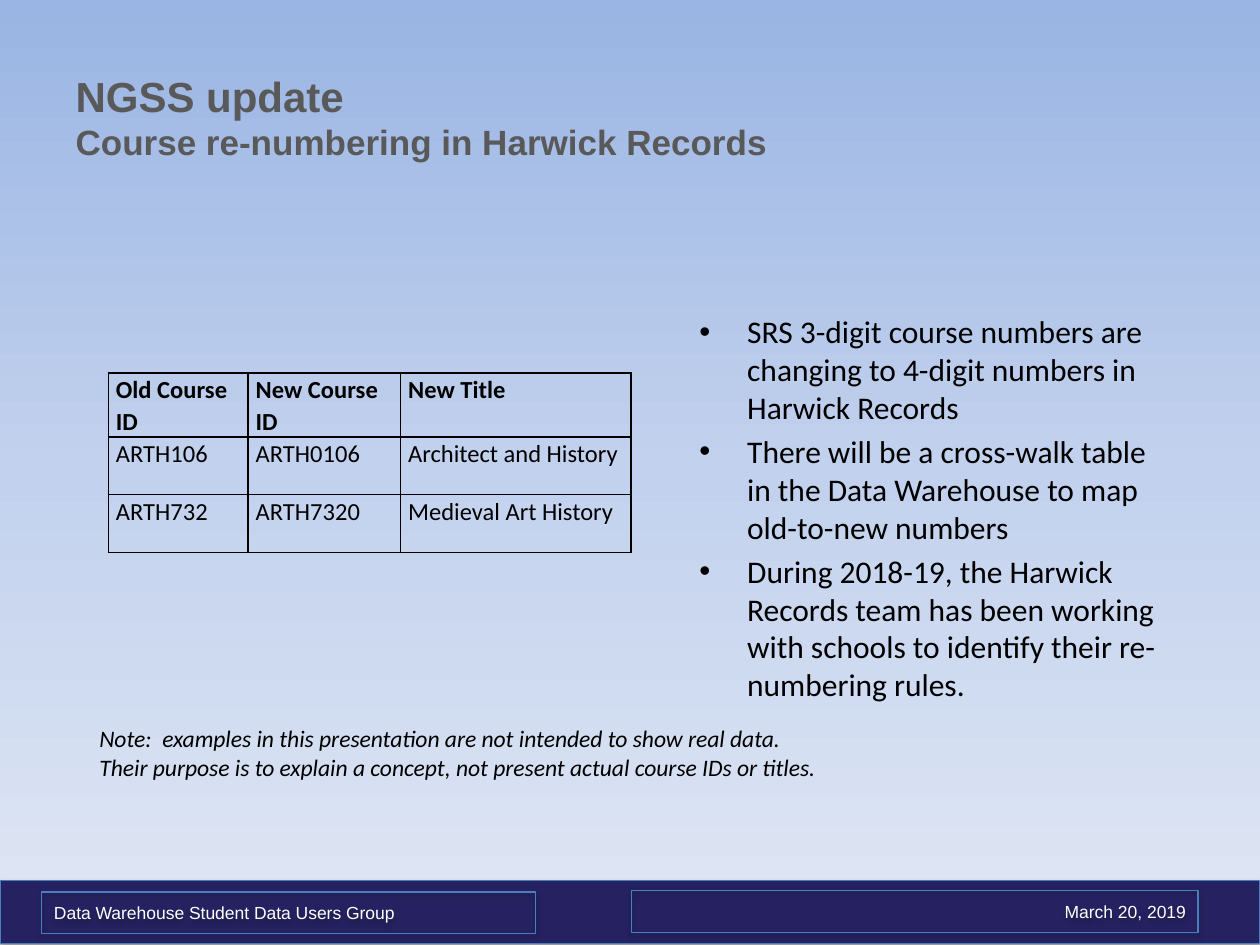
"""Build the course re-numbering update slide."""
from copy import deepcopy
from dataclasses import dataclass

from lxml import etree
from pptx import Presentation
from pptx.dml.color import RGBColor
from pptx.enum.shapes import MSO_SHAPE
from pptx.enum.text import MSO_ANCHOR, MSO_AUTO_SIZE, PP_ALIGN
from pptx.oxml.ns import qn
from pptx.util import Inches, Pt

RECTANGLE = MSO_SHAPE.RECTANGLE
MIDDLE, TOP = MSO_ANCHOR.MIDDLE, MSO_ANCHOR.TOP
LEFT, RIGHT = PP_ALIGN.LEFT, PP_ALIGN.RIGHT
NO_FIT = MSO_AUTO_SIZE.NONE

COLORS = {
    "sky_top": "9AB5E4",
    "sky_middle": "C2D1ED",
    "sky_bottom": "E1E8F5",
    "title": "595959",
    "text": "000000",
    "footer": "262262",
    "footer_line": "4B7EBC",
    "footer_text": "FFFFFF",
}
COLUMN_WIDTHS = (1.11, 1.21, 1.83)
ROW_HEIGHTS = (0.47, 0.46, 0.46)
COURSES = (
    ("Old Course ID", "New Course ID", "New Title"),
    ("ARTH106", "ARTH0106", "Architect and History"),
    ("ARTH732", "ARTH7320", "Medieval Art History"),
)
POINTS = (
    "SRS 3-digit course numbers are changing to 4-digit numbers in Harwick Records",
    "There will be a cross-walk table in the Data Warehouse to map old-to-new numbers",
    "During 2018-19, the Harwick Records team has been working with schools "
    "to identify their re-numbering rules.",
)
NOTE = (
    "Note:  examples in this presentation are not intended to show real data. "
    "Their purpose is to explain a concept, not present actual course IDs or titles."
)


@dataclass
class Area:
    left: float
    top: float
    width: float
    height: float

    def lengths(self) -> tuple:
        return tuple(Inches(n) for n in (self.left, self.top, self.width, self.height))


@dataclass
class TextStyle:
    size: float
    color: str = "text"
    font: str = "Calibri"
    bold: bool = False
    italic: bool = False


@dataclass
class FooterBox:
    area: Area
    text: str = ""
    align: PP_ALIGN = LEFT
    fill: str = ""


FOOTER_STYLE = TextStyle(10, "footer_text", "Arial")
FOOTER = (
    FooterBox(Area(0, 6.99, 10, 0.5), fill="footer"),
    FooterBox(Area(0.33, 7.08, 3.92, 0.33), "Data Warehouse Student Data Users Group"),
    FooterBox(Area(5.01, 7.07, 4.5, 0.33), "March 20, 2019", RIGHT),
)


def rgb(name: str) -> RGBColor:
    return RGBColor.from_string(COLORS[name])


def add_span(para, text: str, style: TextStyle) -> None:
    span = para.add_run()
    span.text = text
    font = span.font
    font.size, font.name = Pt(style.size), style.font
    font.bold, font.italic = style.bold, style.italic
    font.color.rgb = rgb(style.color)


def place(box, area: Area) -> None:
    box.left, box.top, box.width, box.height = area.lengths()


def paint_background(page) -> None:
    fill = page.background.fill
    fill.gradient()
    fill.gradient_angle = 270
    stop_list = page.element.find(".//" + qn("a:gsLst"))
    stop_list.insert(1, deepcopy(stop_list[0]))
    names = ("sky_top", "sky_middle", "sky_bottom")
    for index, (stop, name) in enumerate(zip(fill.gradient_stops, names)):
        stop.position = index / 2
        stop.color.rgb = rgb(name)


def fill_title(box) -> None:
    place(box, Area(0.5, 0.3, 9, 1.25))
    frame = box.text_frame
    frame.vertical_anchor = MIDDLE
    frame.auto_size = NO_FIT
    para = frame.paragraphs[0]
    para.alignment = LEFT
    add_span(para, "NGSS update", TextStyle(24, "title", "Arial", bold=True))
    para.add_line_break()
    add_span(para, "Course re-numbering in Harwick Records",
             TextStyle(20, "title", "Arial", bold=True))


def fill_body(box) -> None:
    place(box, Area(5.45, 2.43, 3.86, 3.57))
    frame = box.text_frame
    frame.vertical_anchor = TOP
    frame.auto_size = NO_FIT
    for index, point in enumerate(POINTS):
        para = frame.add_paragraph() if index else frame.paragraphs[0]
        add_span(para, point, TextStyle(18))
        properties = para._p.get_or_add_pPr()
        properties.set("marL", str(Inches(0.38)))
        properties.set("indent", str(-Inches(0.38)))
        etree.SubElement(properties, qn("a:buChar")).set("char", "•")


def add_borders(cell) -> None:
    properties = cell._tc.get_or_add_tcPr()
    for index, side in enumerate(("lnL", "lnR", "lnT", "lnB")):
        line = etree.Element(qn("a:" + side), w=str(Pt(1)))
        solid = etree.SubElement(line, qn("a:solidFill"))
        etree.SubElement(solid, qn("a:srgbClr")).set("val", COLORS["text"])
        properties.insert(index, line)


def add_course_table(page) -> None:
    area = Area(0.86, 2.96, sum(COLUMN_WIDTHS), sum(ROW_HEIGHTS))
    table = page.shapes.add_table(len(ROW_HEIGHTS), len(COLUMN_WIDTHS), *area.lengths()).table
    table.first_row = table.horz_banding = False
    for column, width in zip(table.columns, COLUMN_WIDTHS):
        column.width = Inches(width)
    for index, (row, height, values) in enumerate(zip(table.rows, ROW_HEIGHTS, COURSES)):
        row.height = Inches(height)
        for cell, value in zip(row.cells, values):
            cell.margin_left = cell.margin_right = Inches(0.06)
            cell.margin_top = cell.margin_bottom = 0
            cell.fill.background()
            add_borders(cell)
            para = cell.text_frame.paragraphs[0]
            para.line_spacing = 1.07
            add_span(para, value, TextStyle(14, bold=index == 0))


def add_note(page) -> None:
    box = page.shapes.add_textbox(*Area(0.69, 5.7, 5.99, 0.56).lengths())
    box.text_frame.word_wrap = True
    add_span(box.text_frame.paragraphs[0], NOTE, TextStyle(13.5, italic=True))


def add_shadow(box) -> None:
    box.shadow.inherit = False
    effects = box._element.spPr.find(qn("a:effectLst"))
    shadow = etree.SubElement(effects, qn("a:outerShdw"), blurRad=str(Pt(3.1)),
                              dist=str(Pt(1.8)), dir="5400000", rotWithShape="0")
    color = etree.SubElement(shadow, qn("a:srgbClr"), val=COLORS["text"])
    etree.SubElement(color, qn("a:alpha"), val="35000")


def add_footer_box(page, item: FooterBox) -> None:
    box = page.shapes.add_shape(RECTANGLE, *item.area.lengths())
    if item.fill:
        box.fill.solid()
        box.fill.fore_color.rgb = rgb(item.fill)
    else:
        box.fill.background()
    box.line.color.rgb = rgb("footer_line")
    box.line.width = Pt(0.75)
    add_shadow(box)
    if item.text:
        box.text_frame.vertical_anchor = MIDDLE
        para = box.text_frame.paragraphs[0]
        para.alignment = item.align
        add_span(para, item.text, FOOTER_STYLE)


def main() -> None:
    deck = Presentation()
    deck.slide_width, deck.slide_height = Inches(10), Inches(7.5)
    page = deck.slides.add_slide(deck.slide_layouts[1])
    paint_background(page)
    fill_title(page.shapes.title)
    add_course_table(page)
    fill_body(page.placeholders[1])
    add_note(page)
    for item in FOOTER:
        add_footer_box(page, item)
    deck.save("out.pptx")


if __name__ == "__main__":
    main()
